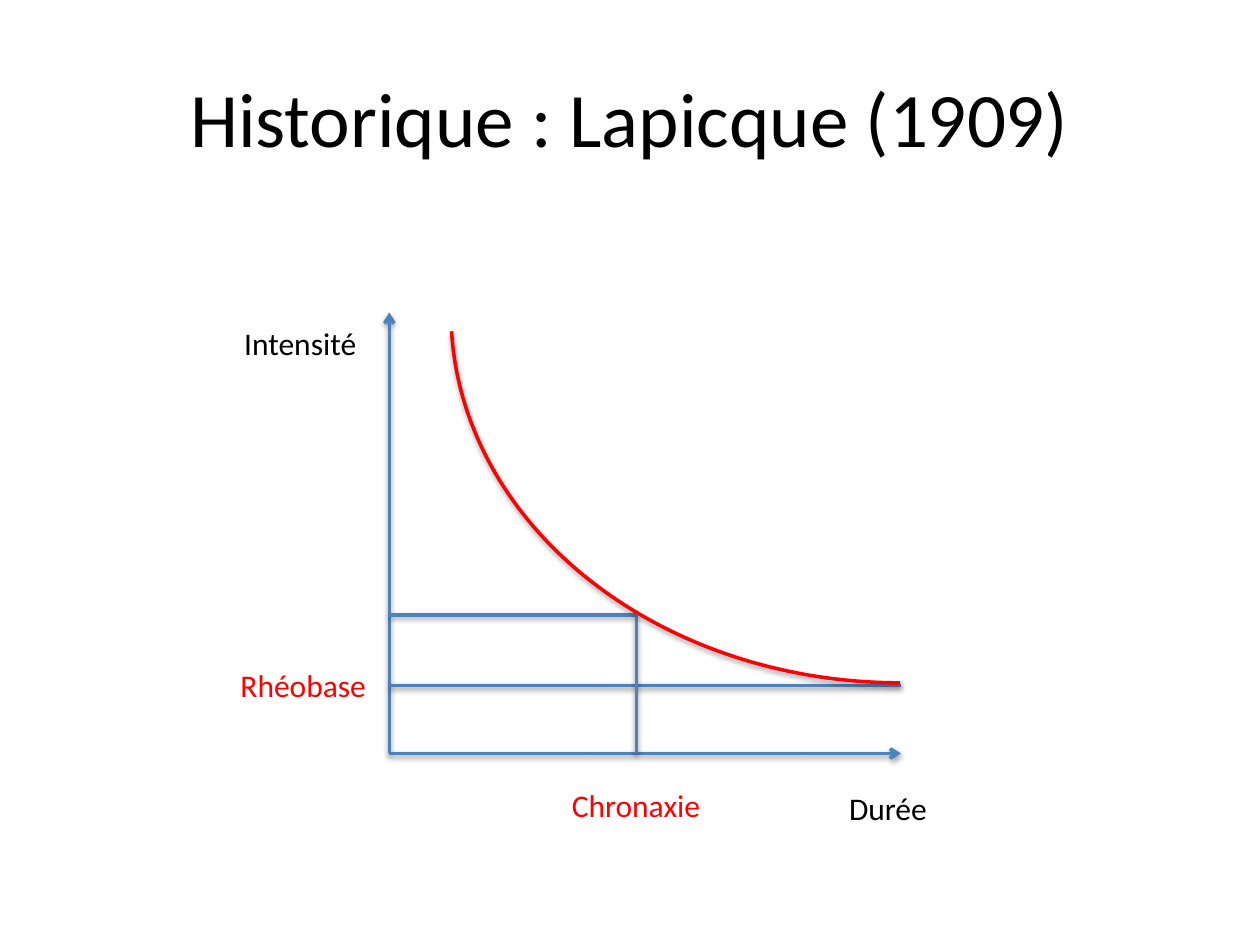
import pptx
import pptx.dml.color
import pptx.enum.shapes
import pptx.enum.text
import pptx.oxml
import pptx.oxml.ns
import pptx.util
from dataclasses import dataclass
from lxml import etree

Inches = pptx.util.Inches
Pt = pptx.util.Pt
RGBColor = pptx.dml.color.RGBColor


@dataclass(frozen=True)
class Theme:
    font: str = "Calibri"
    text: RGBColor = RGBColor(0x00, 0x00, 0x00)
    axis: RGBColor = RGBColor(0x4F, 0x81, 0xBD)
    accent: RGBColor = RGBColor(0xFF, 0x00, 0x00)
    title_size: Pt = Pt(44)
    label_size: Pt = Pt(18)
    line_width: Pt = Pt(2)


theme = Theme()


def style_line(shape, color):
    """Set the stroke and the soft shadow below it."""
    shape.line.color.rgb = color
    shape.line.width = theme.line_width
    properties = shape._element.spPr
    properties.append(pptx.oxml.parse_xml(
        f'<a:effectLst {pptx.oxml.ns.nsdecls("a")}>'
        '<a:outerShdw blurRad="40000" dist="20000" dir="5400000" rotWithShape="0">'
        '<a:srgbClr val="000000"><a:alpha val="38000"/></a:srgbClr>'
        '</a:outerShdw></a:effectLst>'))


def add_text(paragraph, text, size, color):
    run = paragraph.add_run()
    run.text = text
    run.font.name = theme.font
    run.font.size = size
    run.font.color.rgb = color


presentation = pptx.Presentation()
presentation.slide_width = Inches(10)
presentation.slide_height = Inches(7.5)
slide = presentation.slides.add_slide(presentation.slide_layouts[5])

# Title
title = slide.shapes.title
title.left, title.top = Inches(0.5), Inches(0.3)
title.width, title.height = Inches(9), Inches(1.25)
title.text_frame.vertical_anchor = pptx.enum.text.MSO_ANCHOR.MIDDLE
paragraph = title.text_frame.paragraphs[0]
paragraph.alignment = pptx.enum.text.PP_ALIGN.CENTER
add_text(paragraph, "Historique : Lapicque (1909)", theme.title_size, theme.text)

# Key positions on the graph
origin_x, origin_y = 3.09, 5.98
axis_top, axis_right = 2.48, 7.15
rheobase_y = 5.44
chronaxie_x, chronaxie_y = 5.05, 4.88

# Axes and guide lines: start, end, arrowhead
lines = [
    ((origin_x, origin_y), (origin_x, axis_top), True),
    ((origin_x, origin_y), (axis_right, origin_y), True),
    ((axis_right, rheobase_y), (origin_x, rheobase_y), False),
    ((chronaxie_x, chronaxie_y), (origin_x, chronaxie_y), False),
    ((chronaxie_x, origin_y), (chronaxie_x, chronaxie_y), False),
]
for start, end, has_arrow in lines:
    connector = slide.shapes.add_connector(
        pptx.enum.shapes.MSO_CONNECTOR.STRAIGHT,
        *(Inches(value) for value in start + end))
    style_line(connector, theme.axis)
    if has_arrow:
        etree.SubElement(connector.line._get_or_add_ln(),
                         pptx.oxml.ns.qn("a:tailEnd"), type="arrow")

# Intensity-duration curve
curve = slide.shapes.add_shape(
    pptx.enum.shapes.MSO_SHAPE.ARC,
    Inches(3.58), Inches(-0.45), Inches(7.13), Inches(5.87))
curve.adjustments[0] = 162
curve.adjustments[1] = 214.602
curve.fill.background()
style_line(curve, theme.accent)
transform = curve._element.spPr.xfrm
transform.set("flipH", "1")
transform.set("flipV", "1")

# Labels: text, left, top, width, color
labels = [
    ("Intensité", 1.84, 2.52, 1.1, theme.text),
    ("Durée", 6.64, 6.21, 0.83, theme.text),
    ("Rhéobase", 1.81, 5.24, 1.21, theme.accent),
    ("Chronaxie", 4.44, 6.19, 1.23, theme.accent),
]
for text, left, top, width, color in labels:
    label = slide.shapes.add_textbox(
        Inches(left), Inches(top), Inches(width), Inches(0.4))
    label.text_frame.word_wrap = False
    label.text_frame.auto_size = pptx.enum.text.MSO_AUTO_SIZE.SHAPE_TO_FIT_TEXT
    add_text(label.text_frame.paragraphs[0], text, theme.label_size, color)

presentation.save("out.pptx")
